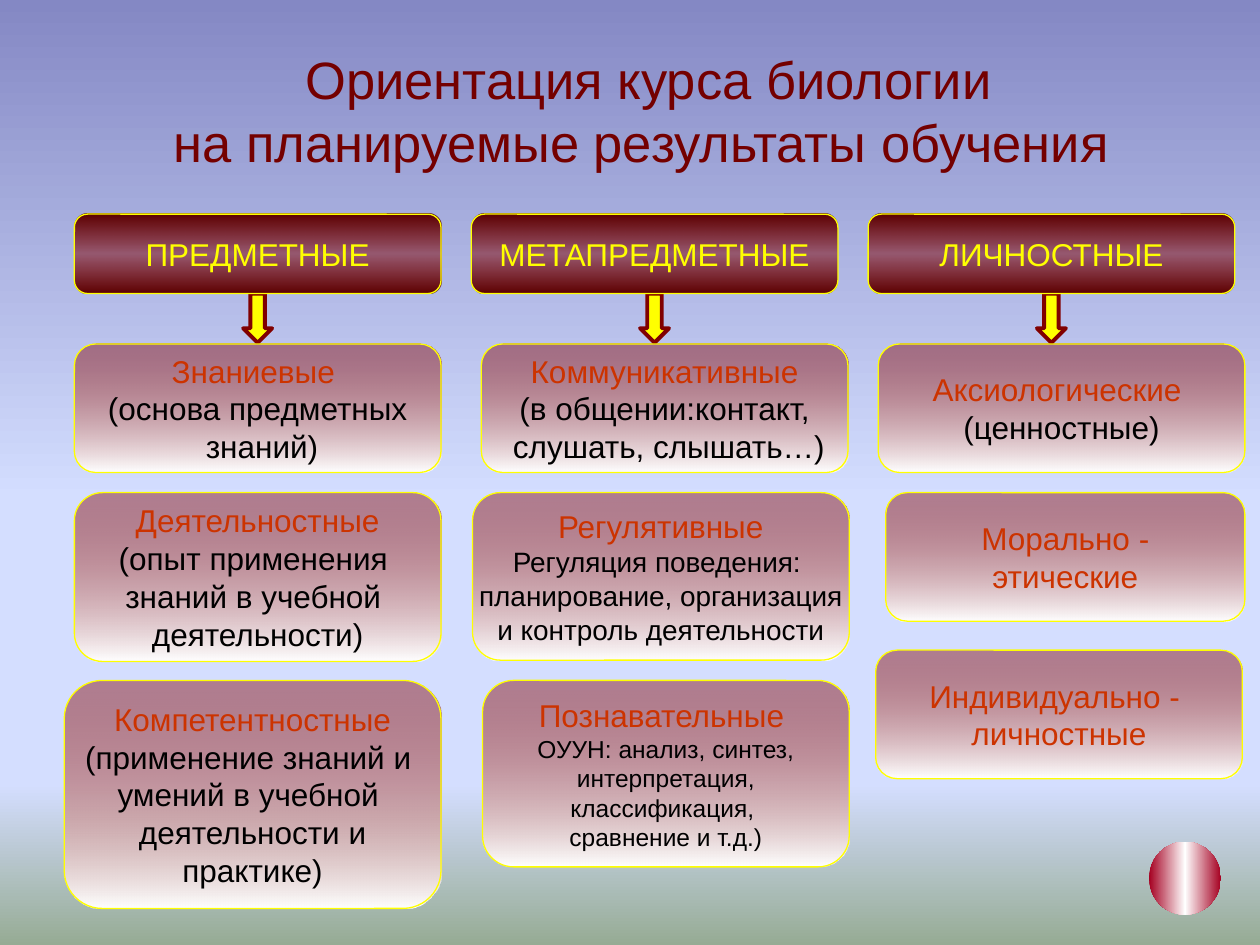
from lxml.etree import SubElement
from pptx import Presentation
from pptx.dml.color import RGBColor
from pptx.enum.shapes import MSO_SHAPE as Shape
from pptx.enum.text import MSO_ANCHOR as Anchor, MSO_AUTO_SIZE as AutoSize, PP_ALIGN as Align
from pptx.oxml.ns import qn
from pptx.util import Inches, Pt

COLORS = {
    "title": "740000", "heading": "CC3300", "body": "000000",
    "yellow": "FFFF00", "maroon": "800000", "dark": "5C0000",
    "white": "FFFFFF", "crimson": "A50021",
    "sky": "8488C4", "haze": "D4DEFF", "grass": "96AB94",
}
HEADER_FILL = [(0, "dark", 100), (50, "maroon", 50), (100, "dark", 100)]
CARD_FILL = [(0, "maroon", 43), (100, "white", 100)]
BALL_FILL = [(0, "crimson", 100), (50, "white", 100), (100, "crimson", 100)]
SKY_FILL = [(0, "sky", 100), (53, "haze", 100), (83, "haze", 100), (100, "grass", 100)]


def set_gradient(fill, element, stops, angle=90):
    """Give a fill linear stops of (position, colour name, opacity) in percent."""
    fill.gradient()
    gradient = element.find(".//" + qn("a:gradFill"))
    stop_list = gradient.find(qn("a:gsLst"))
    for old_stop in list(stop_list):
        stop_list.remove(old_stop)
    for position, name, opacity in stops:
        stop = SubElement(stop_list, qn("a:gs"), pos=str(position * 1000))
        color = SubElement(stop, qn("a:srgbClr"), val=COLORS[name])
        if opacity < 100:
            SubElement(color, qn("a:alpha"), val=str(opacity * 1000))
    gradient.find(qn("a:lin")).set("ang", str(angle * 60000))


def write_line(frame, index, text, size=18, color="body", font="Arial"):
    """Write one centred paragraph, adding it when index is not zero."""
    paragraph = frame.add_paragraph() if index else frame.paragraphs[0]
    paragraph.alignment = Align.CENTER
    run = paragraph.add_run()
    run.text = text
    run.font.name = font
    run.font.size = Pt(size)
    run.font.color.rgb = RGBColor.from_string(COLORS[color])


presentation = Presentation()
presentation.slide_width, presentation.slide_height = Inches(10), Inches(7.5)
slide = presentation.slides.add_slide(presentation.slide_layouts[5])
set_gradient(slide.background.fill, slide.element, SKY_FILL)

title = slide.shapes.title
title.left, title.top, title.width, title.height = map(Inches, (0.9, 0.36, 8.5, 1.02))
title.text_frame.auto_size = AutoSize.NONE
title.text_frame.vertical_anchor = Anchor.MIDDLE
for index, text in enumerate(["Ориентация курса биологии", "на планируемые результаты обучения "]):
    write_line(title.text_frame, index, text, size=30, color="title")

# Column grid
LEFT, PITCH, WIDTH = 0.59, 3.15, 2.91
HEADER_TOP, HEADER_HEIGHT = 1.7, 0.63
ARROW_WIDTH, ARROW_HEIGHT = 0.23, 0.39
ROW_TOPS = [2.73, 3.91, 5.4]

# Each card: left shift in its column, top shift in its row, width, height,
# number of heading lines, body size, lines
columns = [
    ("ПРЕДМЕТНЫЕ", [
        (0, 0, WIDTH, 1.02, 1, 18, ["Знаниевые ", "(основа предметных", " знаний)"]),
        (0, 0, WIDTH, 1.34, 1, 18, ["Деятельностные", "(опыт применения ",
                                    "знаний в учебной ", "деятельности)"]),
        (-0.08, 0, 2.99, 1.81, 1, 18, ["Компетентностные", "(применение знаний и ",
                                       "умений в учебной ", "деятельности и", "практике)"]),
    ]),
    ("МЕТАПРЕДМЕТНЫЕ", [
        (0.08, 0, WIDTH, 1.02, 1, 18, ["Коммуникативные", "(в общении:контакт,",
                                       " слушать, слышать…)"]),
        (0.01, 0, 2.99, 1.33, 1, 16, ["Регулятивные", "Регуляция поведения: ",
                                      "планирование, организация",
                                      "и контроль деятельности"]),
        (0.09, 0, WIDTH, 1.48, 1, 14, ["Познавательные ", "ОУУН: анализ, синтез,",
                                       " интерпретация, ", "классификация, ",
                                       "сравнение и т.д.)"]),
    ]),
    ("ЛИЧНОСТНЫЕ", [
        (0.08, 0, WIDTH, 1.02, 1, 18, ["Аксиологические ", "(ценностные)"]),
        (0.14, 0, 2.85, 1.02, 2, 18, ["Морально -", "этические"]),
        (0.06, -0.24, WIDTH, 1.02, 2, 18, ["Индивидуально - ", "личностные"]),
    ]),
]

boxes = []
for column, (header, cards) in enumerate(columns):
    left = LEFT + column * PITCH
    boxes.append((left, HEADER_TOP, WIDTH, HEADER_HEIGHT, HEADER_FILL,
                  [(header, 18, "yellow")]))
    for row_top, (shift, rise, width, height, headings, size, lines) in zip(ROW_TOPS, cards):
        styled = [(text, 18, "heading") if index < headings else (text, size, "body")
                  for index, text in enumerate(lines)]
        boxes.append((left + shift, row_top + rise, width, height, CARD_FILL, styled))

    arrow = slide.shapes.add_shape(
        Shape.DOWN_ARROW, Inches(left + (WIDTH - ARROW_WIDTH) / 2),
        Inches(HEADER_TOP + HEADER_HEIGHT), Inches(ARROW_WIDTH), Inches(ARROW_HEIGHT))
    arrow.shadow.inherit = False
    arrow.fill.solid()
    arrow.fill.fore_color.rgb = RGBColor.from_string(COLORS["yellow"])
    arrow.line.color.rgb = RGBColor.from_string(COLORS["maroon"])
    arrow.line.width = Pt(2.25)

for left, top, width, height, stops, lines in boxes:
    box = slide.shapes.add_shape(
        Shape.ROUNDED_RECTANGLE, *map(Inches, (left, top, width, height)))
    box.shadow.inherit = False
    set_gradient(box.fill, box.element, stops)
    box.line.color.rgb = RGBColor.from_string(COLORS["yellow"])
    box.line.width = Pt(0.75)
    box.text_frame.word_wrap = False
    box.text_frame.vertical_anchor = Anchor.MIDDLE
    for index, (text, size, color) in enumerate(lines):
        write_line(box.text_frame, index, text, size=size, color=color)

ball = slide.shapes.add_shape(Shape.OVAL, *map(Inches, (9.12, 6.68, 0.57, 0.58)))
ball.shadow.inherit = False
set_gradient(ball.fill, ball.element, BALL_FILL, angle=0)
ball.line.fill.background()

presentation.save("out.pptx")
